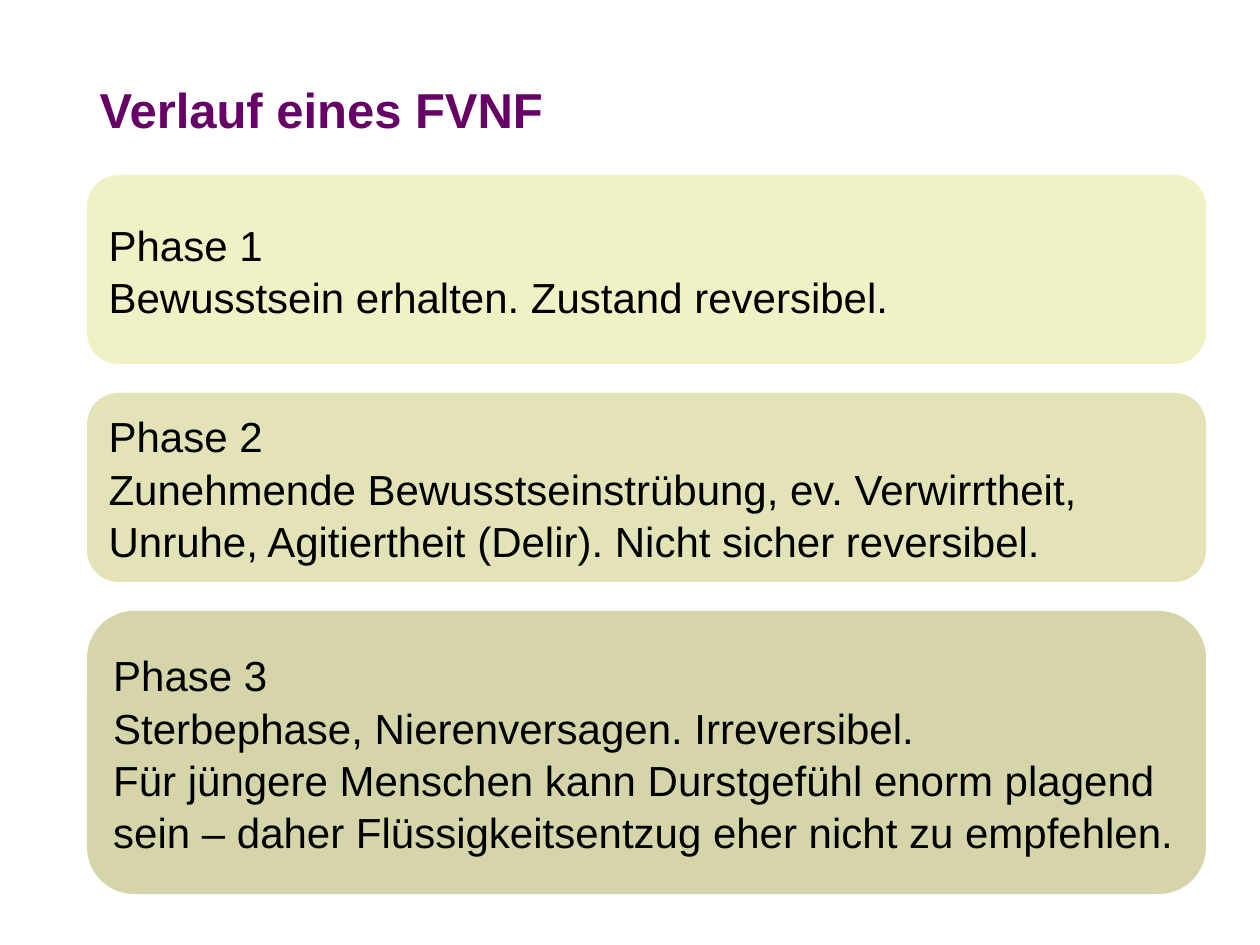
from pptx import Presentation
from pptx.dml.color import RGBColor
from pptx.enum.shapes import MSO_SHAPE
from pptx.enum.text import MSO_ANCHOR, PP_ALIGN
from pptx.util import Pt

ROUNDED = MSO_SHAPE.ROUNDED_RECTANGLE
MIDDLE = MSO_ANCHOR.MIDDLE
LEFT = PP_ALIGN.LEFT

PURPLE = RGBColor(0x66, 0x00, 0x66)
BLACK = RGBColor(0x00, 0x00, 0x00)
PALE_OLIVE = RGBColor(0xF0, 0xF2, 0xC5)
LIGHT_OLIVE = RGBColor(0xE3, 0xE3, 0xB7)
OLIVE = RGBColor(0xD6, 0xD5, 0xA9)

# Content: heading, description, fill, height in px
TITLE = "Verlauf eines FVNF"
PHASES = [
    ("Phase 1", "Bewusstsein erhalten. Zustand reversibel.", PALE_OLIVE, 189),
    ("Phase 2",
     "Zunehmende Bewusstseinstrübung, ev. Verwirrtheit, Unruhe, "
     "Agitiertheit (Delir). Nicht sicher reversibel.", LIGHT_OLIVE, 189),
    ("Phase 3",
     "Sterbephase, Nierenversagen. Irreversibel.\n"
     "Für jüngere Menschen kann Durstgefühl enorm plagend sein – "
     "daher Flüssigkeitsentzug eher nicht zu empfehlen.", OLIVE, 283),
]

# Layout in px, 126 to the inch
EMU_PER_PX = 914400 // 126
SLIDE_WIDTH, SLIDE_HEIGHT = 1260, 945
MARGIN_LEFT = 87
TITLE_TOP, TITLE_WIDTH, TITLE_HEIGHT = 50, 1086, 125
PHASE_TOP, PHASE_WIDTH, PHASE_GAP = 175, 1119, 29

TITLE_FONT = {"name": "Arial", "size": Pt(28), "bold": True}
PHASE_FONT = {"name": "Arial", "size": Pt(24), "bold": False}


def px(length):
    return length * EMU_PER_PX


def write(frame, lines, font_format, color, spacing):
    frame.word_wrap = True
    frame.vertical_anchor = MIDDLE
    for number, line in enumerate(lines):
        paragraph = frame.add_paragraph() if number else frame.paragraphs[0]
        paragraph.text = line
        paragraph.alignment = LEFT
        paragraph.line_spacing = spacing
        for run in paragraph.runs:
            for attribute, value in font_format.items():
                setattr(run.font, attribute, value)
            run.font.color.rgb = color


def main():
    deck = Presentation()
    deck.slide_width, deck.slide_height = px(SLIDE_WIDTH), px(SLIDE_HEIGHT)
    slide = deck.slides.add_slide(deck.slide_layouts.get_by_name("Title Only"))

    # Title
    title = slide.shapes.title
    title.left, title.top = px(MARGIN_LEFT), px(TITLE_TOP)
    title.width, title.height = px(TITLE_WIDTH), px(TITLE_HEIGHT)
    write(title.text_frame, [TITLE], TITLE_FONT, PURPLE, 0.9)

    # Phases, stacked with equal gaps
    top = PHASE_TOP
    for heading, description, fill, height in PHASES:
        phase = slide.shapes.add_shape(
            ROUNDED, px(MARGIN_LEFT), px(top), px(PHASE_WIDTH), px(height))
        phase.shadow.inherit = False
        phase.fill.solid()
        phase.fill.fore_color.rgb = fill
        phase.line.fill.background()
        write(phase.text_frame, [heading, description], PHASE_FONT, BLACK, 1.04)
        top += height + PHASE_GAP

    deck.save("out.pptx")


if __name__ == "__main__":
    main()
